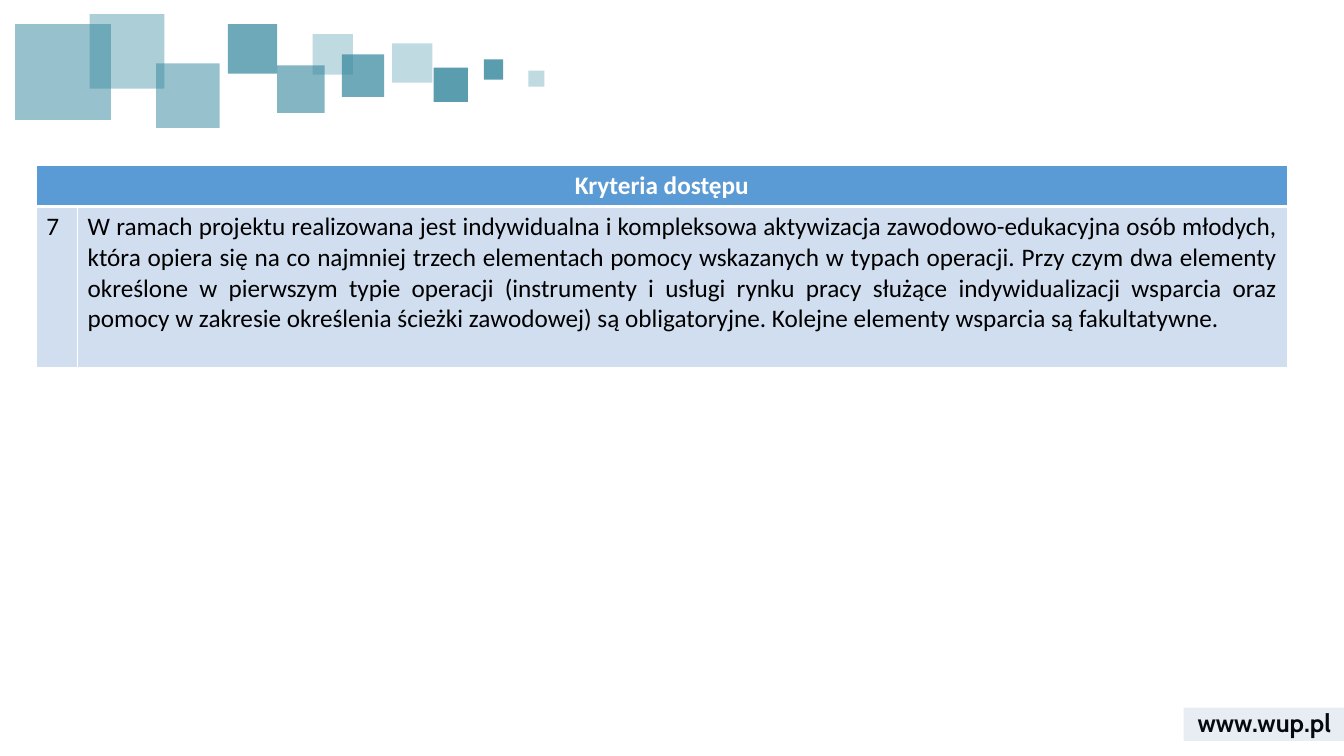
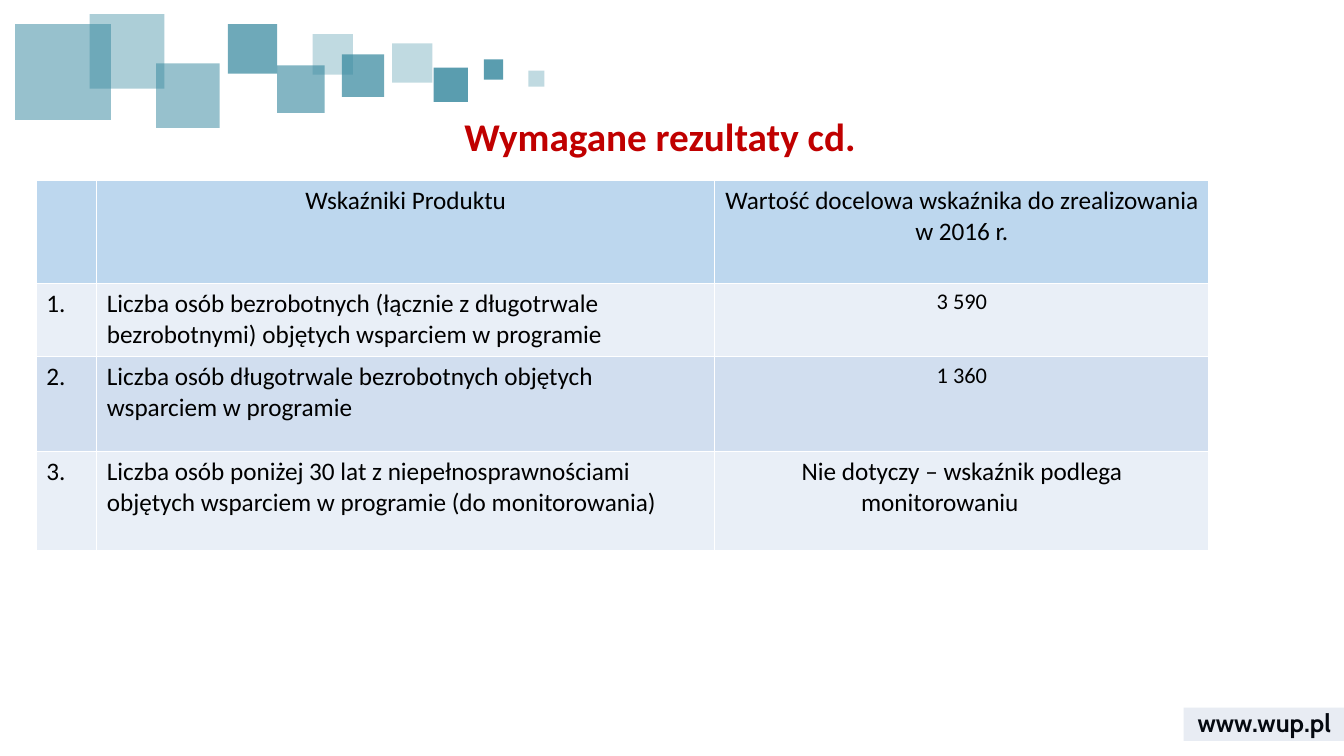
from lxml import etree
from pptx import Presentation
from pptx import util as u
from pptx.dml.color import RGBColor
from pptx.enum import shapes, text
from pptx.oxml import ns

Inches = u.Inches
TEAL, NAVY, RED, BLACK, WHITE = "31859C", "2F5597", "C00000", "000000", "FFFFFF"
BLUE, SKY, BAND, PALE = "5B9BD5", "BDD7EE", "D1DEEF", "E9EFF7"
LEFT, CENTER, JUSTIFY = text.PP_ALIGN.LEFT, text.PP_ALIGN.CENTER, text.PP_ALIGN.JUSTIFY


def write(frame, content, size=18, font="Calibri", color=BLACK, bold=False, align=LEFT):
    frame.text = content
    frame.word_wrap = True
    for paragraph in frame.paragraphs:
        paragraph.alignment = align
        paragraph.font.size = u.Pt(size)
        paragraph.font.name = font
        paragraph.font.bold = bold
        paragraph.font.color.rgb = RGBColor.from_string(color)


def style_cell(cell, fill, top=0.96, bottom=0.96):
    props = cell._tc.get_or_add_tcPr()
    for side, width in (("L", 0.96), ("R", 0.96), ("T", top), ("B", bottom)):
        line = etree.SubElement(props, ns.qn(f"a:ln{side}"), w=str(u.Pt(width)))
        solid = etree.SubElement(line, ns.qn("a:solidFill"))
        etree.SubElement(solid, ns.qn("a:srgbClr"), val=WHITE)
    cell.fill.solid()
    cell.fill.fore_color.rgb = RGBColor.from_string(fill)


prs = Presentation()
prs.slide_width, prs.slide_height = Inches(13.33), Inches(7.5)
criteria_slide = prs.slides.add_slide(prs.slide_layouts[6])
results_slide = prs.slides.add_slide(prs.slide_layouts[5])

# Shared master art: web address, squares and footer band
address = criteria_slide.shapes.add_textbox(Inches(11.74), Inches(6.97), Inches(1.6), Inches(0.4))
write(address.text_frame, "www.wup.pl", font="Cabin", bold=True, align=CENTER)
address.text_frame.vertical_anchor = text.MSO_ANCHOR.MIDDLE
master_art = [address]

# left, top, width, height, colour, opacity in percent
blocks = [
    (3.89, 0.43, 0.4, 0.39, TEAL, 30),
    (4.3, 0.67, 0.34, 0.34, TEAL, 80),
    (3.39, 0.54, 0.42, 0.42, TEAL, 70),
    (0.15, 0.24, 0.95, 0.95, TEAL, 50),
    (2.75, 0.65, 0.47, 0.47, TEAL, 60),
    (1.55, 0.63, 0.63, 0.64, TEAL, 50),
    (0.89, 0.14, 0.74, 0.74, TEAL, 40),
    (4.8, 0.59, 0.19, 0.2, TEAL, 80),
    (2.26, 0.24, 0.49, 0.49, TEAL, 70),
    (3.1, 0.34, 0.4, 0.4, TEAL, 30),
    (5.24, 0.7, 0.16, 0.16, TEAL, 30),
    (11.74, 7.02, 1.6, 0.33, NAVY, 11),
]
for *box, color, opacity in blocks:
    block = criteria_slide.shapes.add_shape(shapes.MSO_SHAPE.RECTANGLE, *map(Inches, box))
    block.shadow.inherit = False
    block.line.fill.background()
    block.fill.solid()
    block.fill.fore_color.rgb = RGBColor.from_string(color)
    tint = block._element.spPr.find(".//" + ns.qn("a:srgbClr"))
    etree.SubElement(tint, ns.qn("a:alpha"), val=str(opacity * 1000))
    master_art.append(block)

# Move the art to the master, so that both slides inherit it
for number, art in enumerate(master_art, start=100):
    art._element.nvSpPr.cNvPr.set("id", str(number))
    prs.slide_master.shapes.element.append(art._element)

# Title of the results slide
title = results_slide.shapes.title
title.left, title.top, title.width, title.height = map(Inches, (0.34, 1.07, 12.41, 0.69))
write(title.text_frame, "Wymagane rezultaty cd.", size=28, color=RED, bold=True, align=CENTER)
title.text_frame.auto_size = text.MSO_AUTO_SIZE.NONE
title.text_frame.vertical_anchor = text.MSO_ANCHOR.TOP
for margin in ("left", "top", "right", "bottom"):
    setattr(title.text_frame, f"margin_{margin}", Inches(0.04))

# Table contents: each cell is text and its format
criterion = (
    "W ramach projektu realizowana jest indywidualna i kompleksowa aktywizacja "
    "zawodowo-edukacyjna osób młodych, która opiera się na co najmniej trzech elementach "
    "pomocy wskazanych w typach operacji. Przy czym dwa elementy określone w pierwszym typie "
    "operacji (instrumenty i usługi rynku pracy służące indywidualizacji wsparcia oraz pomocy "
    "w zakresie określenia ścieżki zawodowej) są obligatoryjne. Kolejne elementy wsparcia są "
    "fakultatywne."
)
criteria_rows = [
    [("Kryteria dostępu", dict(color=WHITE, bold=True, align=CENTER)), ("", {})],
    [("7", {}), (criterion, dict(align=JUSTIFY))],
]
centered = dict(align=CENTER)
figure = dict(size=16, align=CENTER)
results_rows = [
    [("", {}), ("Wskaźniki Produktu", centered),
     ("Wartość docelowa wskaźnika do zrealizowania\nw 2016 r.", centered)],
    [("1.", {}),
     ("Liczba osób bezrobotnych (łącznie z długotrwale bezrobotnymi) "
      "objętych wsparciem w programie", {}),
     ("3 590", figure)],
    [("2.", {}),
     ("Liczba osób długotrwale bezrobotnych objętych wsparciem w programie", {}),
     ("1 360", figure)],
    [("3.", {}),
     ("Liczba osób poniżej 30 lat z niepełnosprawnościami objętych wsparciem "
      "w programie (do monitorowania)", {}),
     ("Nie dotyczy – wskaźnik podlega monitorowaniu \t", centered)],
]

# slide, top, column widths, row heights, row fills, rule under the header, contents
tables = [
    (criteria_slide, 1.64, (0.41, 12), (0.41, 1.6), (BLUE, BAND), 3, criteria_rows),
    (results_slide, 1.79, (0.6, 6.13, 4.9), (1.02, 0.73, 0.94, 0.98),
     (SKY, PALE, BAND, PALE), 0.96, results_rows),
]
for slide, top, widths, heights, fills, rule, rows in tables:
    table = slide.shapes.add_table(
        len(heights), len(widths), Inches(0.36), Inches(top),
        Inches(sum(widths)), Inches(sum(heights))).table
    table.first_row = table.horz_banding = False
    for column, width in zip(table.columns, widths):
        column.width = Inches(width)
    for r, (height, fill, row) in enumerate(zip(heights, fills, rows)):
        table.rows[r].height = Inches(height)
        for c, (content, style) in enumerate(row):
            cell = table.cell(r, c)
            style_cell(cell, fill, top=rule if r == 1 else 0.96, bottom=rule if r == 0 else 0.96)
            write(cell.text_frame, content, **style)
    if slide is criteria_slide:
        table.cell(0, 0).merge(table.cell(0, 1))

prs.save("out.pptx")
